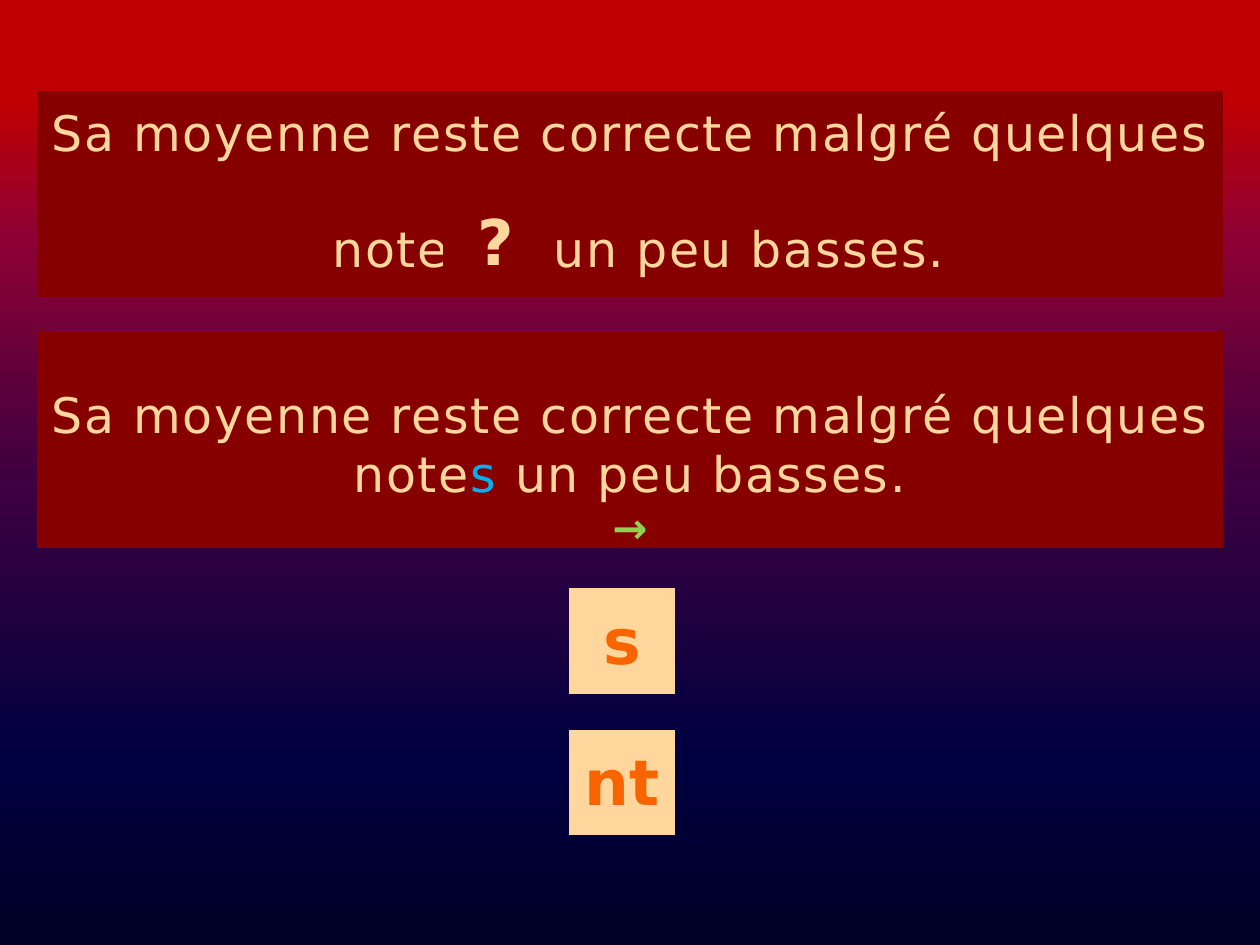
import copy
from dataclasses import dataclass

import pptx
import pptx.dml.color
import pptx.enum.shapes
import pptx.enum.text
import pptx.util
from pptx.util import Inches


@dataclass(frozen=True)
class Theme:
    font: str = "DejaVu Sans"
    panel: str = "860000"
    cream: str = "FFD79D"
    orange: str = "F86400"
    ending: str = "00B0F0"
    arrow: str = "92D050"
    sentence_size: int = 28
    letter_size: int = 36
    arrow_size: int = 24
    blank_line: float = 32.6
    gap_spacing: float = 50.5
    gradient: tuple = (
        (0, "000026"),
        (20, "000040"),
        (50, "400040"),
        (75, "8F0134"),
        (90, "C00000"),
    )


THEME = Theme()
OPENING = "Sa moyenne reste correcte malgré quelques"


def rgb(color):
    return pptx.dml.color.RGBColor.from_string(color)


def add_block(slide, left, top, width, height):
    shape = slide.shapes.add_shape(
        pptx.enum.shapes.MSO_SHAPE.ACTION_BUTTON_CUSTOM,
        Inches(left), Inches(top), Inches(width), Inches(height),
    )
    shape.shadow.inherit = False
    shape.line.fill.background()
    return shape


def add_backdrop(slide):
    fill = add_block(slide, 0, 0, 10, 7.5).fill
    fill.gradient()
    fill.gradient_angle = 90
    stop_list = fill.gradient_stops[0]._gs.getparent()
    while len(stop_list) < len(THEME.gradient):
        stop_list.append(copy.deepcopy(stop_list[0]))
    for stop, (position, color) in zip(fill.gradient_stops, THEME.gradient):
        stop.position = position / 100
        stop.color.rgb = rgb(color)


def add_panel(slide, box, color, top_inset, bottom_inset):
    shape = add_block(slide, *box)
    shape.fill.solid()
    shape.fill.fore_color.rgb = rgb(color)
    frame = shape.text_frame
    frame.word_wrap = False
    frame.vertical_anchor = pptx.enum.text.MSO_ANCHOR.MIDDLE
    frame.margin_left = frame.margin_right = Inches(0.1)
    frame.margin_top = Inches(top_inset)
    frame.margin_bottom = Inches(bottom_inset)
    return frame


def style_paragraph(paragraph, size, color, bold=False, spacing=0):
    paragraph.alignment = pptx.enum.text.PP_ALIGN.CENTER
    font = paragraph.font
    font.name = THEME.font
    font.size = pptx.util.Pt(size)
    font.bold = bold
    if color:
        font.color.rgb = rgb(color)
    if spacing:
        properties = paragraph._p.get_or_add_pPr().get_or_add_defRPr()
        properties.set("spc", str(round(spacing * 100)))


def add_runs(paragraph, *texts):
    runs = []
    for text in texts:
        run = paragraph.add_run()
        run.text = text
        runs.append(run)
    return runs


def add_letter(slide, box, text, fill, color):
    paragraph = add_panel(slide, box, fill, 0.04, 0.08).paragraphs[0]
    style_paragraph(paragraph, THEME.letter_size, color, bold=True)
    add_runs(paragraph, text)


def add_opening(frame):
    paragraph = frame.paragraphs[0]
    style_paragraph(paragraph, THEME.sentence_size, THEME.cream, spacing=1)
    add_runs(paragraph, OPENING)


def add_question(slide):
    frame = add_panel(slide, (0.29, 0.72, 9.42, 1.64), THEME.panel, 0.02, 0.08)
    add_opening(frame)
    ending = frame.add_paragraph()
    style_paragraph(ending, THEME.sentence_size, THEME.cream, spacing=1)
    ending.space_before = pptx.util.Pt(THEME.blank_line)
    gap = add_runs(ending, " note", " ", "un peu basses.")[1]
    gap._r.get_or_add_rPr().set("spc", str(round(THEME.gap_spacing * 100)))


def add_answer(slide):
    top_inset = 0.04 + THEME.blank_line / 72
    frame = add_panel(slide, (0.29, 2.63, 9.42, 1.72), THEME.panel, top_inset, 0.04)
    add_opening(frame)
    ending = frame.add_paragraph()
    style_paragraph(ending, THEME.sentence_size, None, spacing=1)
    runs = add_runs(ending, "note", "s", " un peu basses.")
    for run, color in zip(runs, (THEME.cream, THEME.ending, THEME.cream)):
        run.font.color.rgb = rgb(color)
    arrow = frame.add_paragraph()
    style_paragraph(arrow, THEME.arrow_size, THEME.arrow, bold=True, spacing=1)
    arrow.space_after = pptx.util.Pt(6)
    add_runs(arrow, "→")


def main():
    presentation = pptx.Presentation()
    presentation.slide_width = Inches(10)
    presentation.slide_height = Inches(7.5)
    slide = presentation.slides.add_slide(presentation.slide_layouts[6])
    add_backdrop(slide)
    add_question(slide)
    add_letter(slide, (3.52, 1.51, 0.83, 0.84), "?", THEME.panel, THEME.cream)
    for text, top in (("nt", 5.79), ("s", 4.67)):
        add_letter(slide, (4.52, top, 0.84, 0.84), text, THEME.cream, THEME.orange)
    add_answer(slide)
    presentation.save("out.pptx")


if __name__ == "__main__":
    main()
